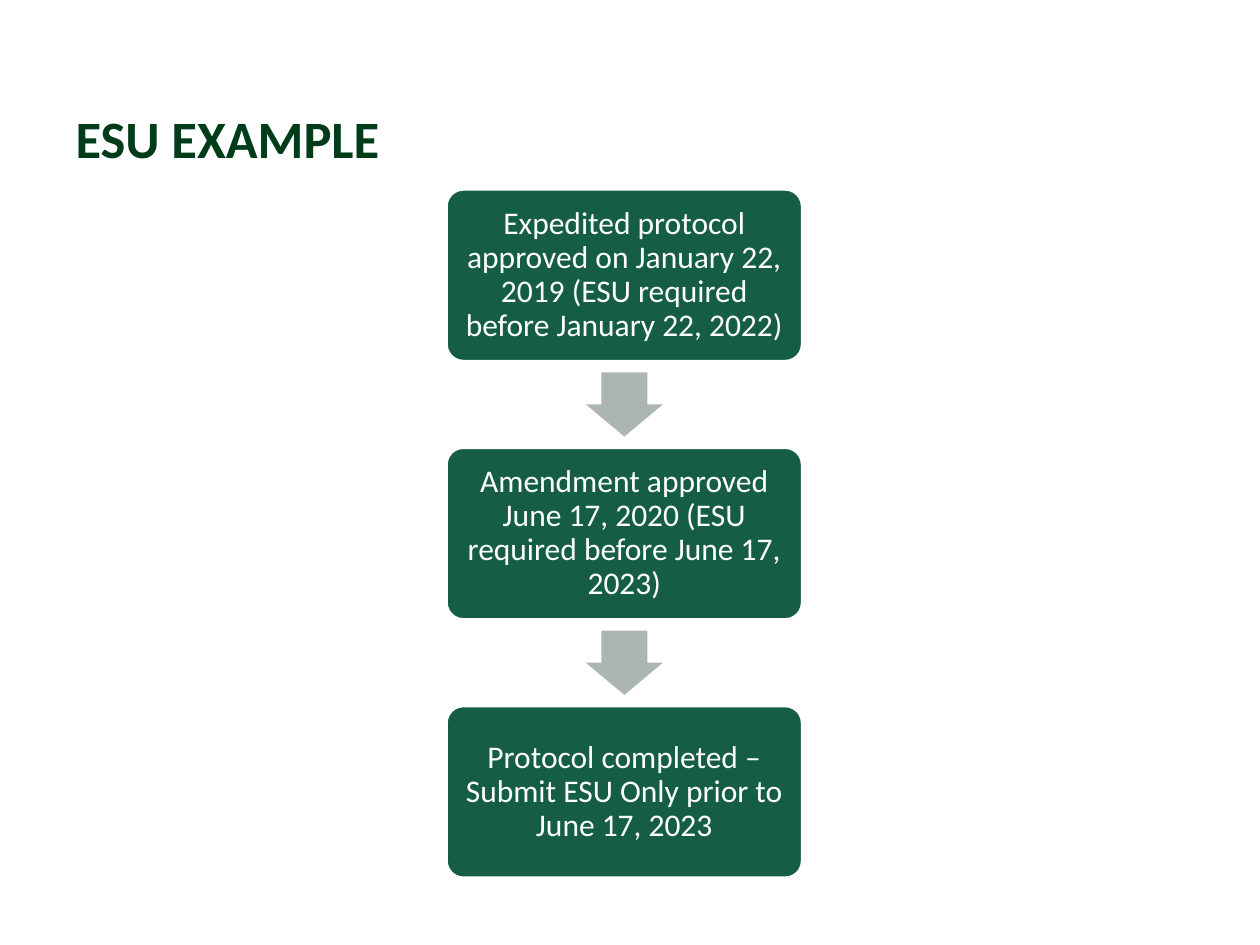
from dataclasses import dataclass

from pptx import Presentation
from pptx.dml.color import RGBColor
from pptx.enum.shapes import MSO_SHAPE as Preset
from pptx.enum.text import MSO_ANCHOR as Anchor, PP_ALIGN as Align
from pptx.shapes.autoshape import Shape
from pptx.slide import Slide
from pptx.util import Inches, Pt


@dataclass(frozen=True)
class Theme:
    font: str = "Calibri"
    title_size: int = 30
    step_size: int = 18
    title_color: RGBColor = RGBColor(0x00, 0x3C, 0x19)
    step_fill: RGBColor = RGBColor(0x15, 0x5E, 0x45)
    arrow_fill: RGBColor = RGBColor(0xAC, 0xB6, 0xB1)
    white: RGBColor = RGBColor(0xFF, 0xFF, 0xFF)


@dataclass(frozen=True)
class Column:
    center: float = 4.955
    top: float = 1.5
    width: float = 2.83
    height: float = 1.37
    pitch: float = 2.05

    def row_top(self, row: int) -> float:
        return self.top + row * self.pitch

    def gap_center(self, row: int) -> float:
        return self.row_top(row) + (self.height + self.pitch) / 2


@dataclass(frozen=True)
class Step:
    row: int
    text: str


THEME = Theme()
COLUMN = Column()
ARROW_LENGTH, ARROW_WIDTH = 0.51, 0.61
STEPS = [
    Step(0, "Expedited protocol approved on January 22, 2019 (ESU required before January 22, 2022)"),
    Step(1, "Amendment approved June 17, 2020 (ESU required before June 17, 2023)"),
    Step(2, "Protocol completed – Submit ESU Only prior to June 17, 2023"),
]


def add_centered(slide: Slide, preset: Preset, middle: float, width: float,
                 height: float, fill: RGBColor) -> Shape:
    shape = slide.shapes.add_shape(
        preset, Inches(COLUMN.center - width / 2), Inches(middle - height / 2),
        Inches(width), Inches(height))
    shape.shadow.inherit = False
    shape.fill.solid()
    shape.fill.fore_color.rgb = fill
    return shape


def draw_title(slide: Slide, text: str) -> None:
    title = slide.shapes.title
    title.left, title.top = Inches(0.5), Inches(0.79)
    title.width, title.height = Inches(9), Inches(1.07)
    frame = title.text_frame
    frame.text = text
    frame.vertical_anchor = Anchor.TOP
    paragraph = frame.paragraphs[0]
    paragraph.alignment = Align.LEFT
    paragraph.font.name = THEME.font
    paragraph.font.size = Pt(THEME.title_size)
    paragraph.font.bold = True
    paragraph.font.color.rgb = THEME.title_color


def draw_step(slide: Slide, step: Step) -> None:
    middle = COLUMN.row_top(step.row) + COLUMN.height / 2
    shape = add_centered(slide, Preset.ROUNDED_RECTANGLE, middle,
                         COLUMN.width, COLUMN.height, THEME.step_fill)
    shape.adjustments[0] = 0.1
    shape.line.color.rgb = THEME.white
    shape.line.width = Pt(2)
    frame = shape.text_frame
    frame.word_wrap = True
    frame.vertical_anchor = Anchor.MIDDLE
    frame.margin_left = frame.margin_right = Inches(0.1)
    frame.margin_top = frame.margin_bottom = Inches(0.1)
    frame.text = step.text
    paragraph = frame.paragraphs[0]
    paragraph.alignment = Align.CENTER
    paragraph.line_spacing = 0.9
    paragraph.font.name = THEME.font
    paragraph.font.size = Pt(THEME.step_size)
    paragraph.font.color.rgb = THEME.white


def draw_arrow(slide: Slide, row: int) -> None:
    arrow = add_centered(slide, Preset.RIGHT_ARROW, COLUMN.gap_center(row),
                         ARROW_LENGTH, ARROW_WIDTH, THEME.arrow_fill)
    arrow.rotation = 90
    arrow.adjustments[0] = 0.6
    arrow.adjustments[1] = 0.5
    arrow.line.fill.background()


def main() -> None:
    presentation = Presentation()
    presentation.slide_width = Inches(10)
    presentation.slide_height = Inches(7.5)
    slide = presentation.slides.add_slide(presentation.slide_layouts[5])
    draw_title(slide, "ESU EXAMPLE")
    for step in STEPS:
        draw_step(slide, step)
        if step is not STEPS[-1]:
            draw_arrow(slide, step.row)
    presentation.save("out.pptx")


if __name__ == "__main__":
    main()
